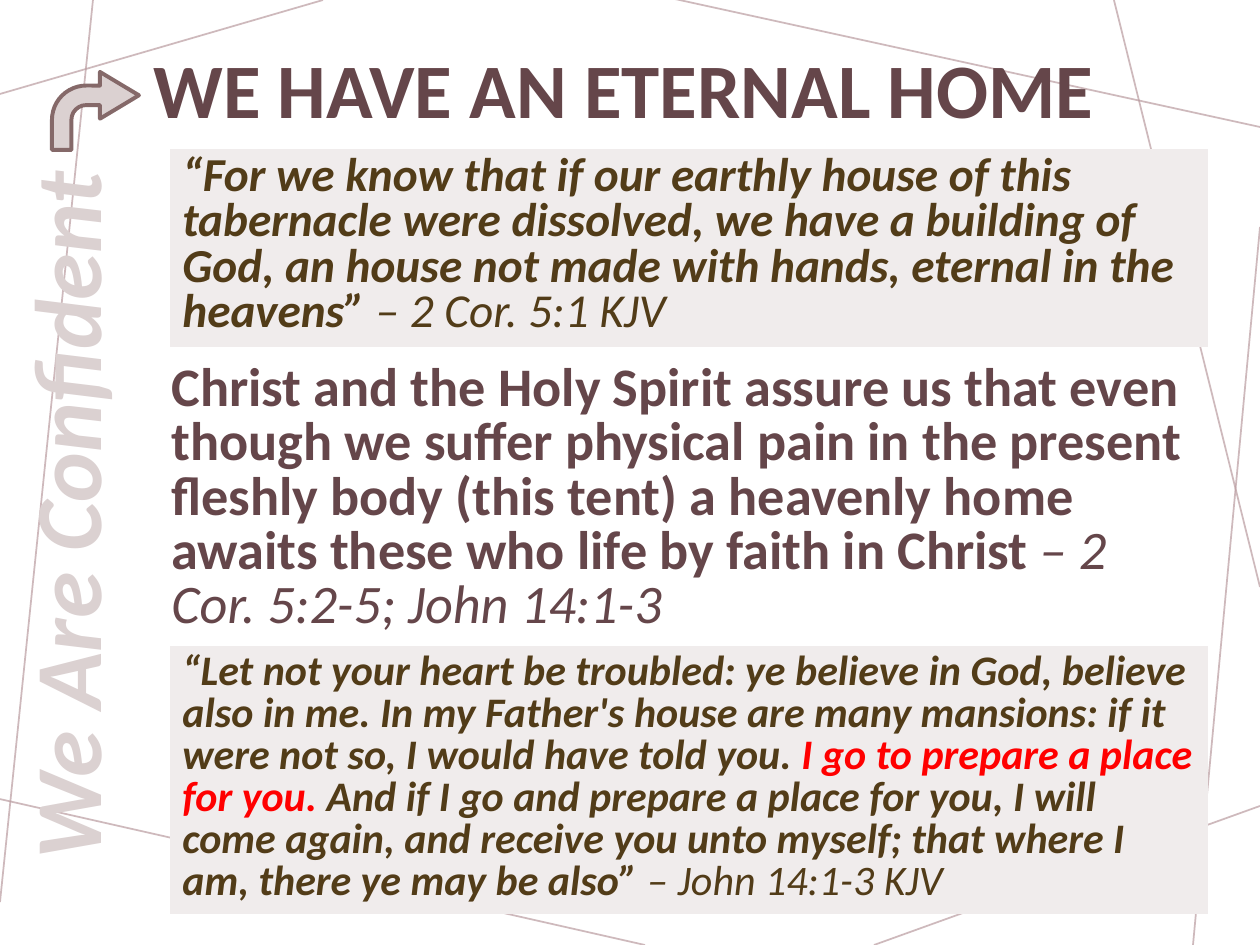
from lxml import etree
from pptx import Presentation
from pptx.dml.color import RGBColor
from pptx.enum.shapes import MSO_CONNECTOR, MSO_SHAPE
from pptx.enum.text import MSO_ANCHOR as Anchor, PP_ALIGN as Align
from pptx.oxml.ns import qn
from pptx.util import Emu, Pt

PX_PER_INCH = 126
FONT = "Calibri"
MAUVE, BROWN, RED = "65464A", "523C18", "FF0000"
PALE, PANEL, ARROW_EDGE, WEB = "DBD1D1", "F0ECEC", "856969", "BA9CA0"

# Background lines: x1, y1, x2, y2 in px
WEB_LINES = [
    (323, 0, 0, 94),
    (93, 0, 0, 902),
    (645, 945, -5, 798),
    (1260, 806, 874, 945),
    (1260, 227, 1193, 945),
    (1260, 587, 1114, 0),
    (1260, 127, 675, -1),
]

ARROW_BOX = (52, 72, 87, 78)
ARROW_ADJUSTMENTS = (0.25, 0.3, 0.5, 0.44)

# Each run: text, colour, bold, italic
TEXTS = [
    dict(box=(159, 357, 1050, 295), size=31, spacing=Pt(31), runs=[
        ("Christ and the Holy Spirit assure us that even though we suffer "
         "physical pain in the present fleshly body (this tent) a heavenly "
         "home awaits these who life by faith in Christ ", MAUVE, True, False),
        ("– 2 Cor. 5:2-5; John 14:1-3", MAUVE, False, True)]),
    dict(box=(141, 55, 1119, 78), size=44, spacing=0.9, anchor=Anchor.MIDDLE, runs=[
        ("WE HAVE AN ETERNAL HOME", MAUVE, True, False)]),
    dict(box=(-297, 452, 723, 127), size=54, rotation=270, wrap=False,
         align=Align.CENTER, runs=[("We Are Confident", PALE, True, True)]),
    dict(box=(170, 149, 1038, 198), size=27, spacing=Pt(26), fill=PANEL, runs=[
        ("“For we know that if our earthly house of this tabernacle were "
         "dissolved, we have a building of God, an house not made with hands, "
         "eternal in the heavens” ", BROWN, True, True),
        ("– 2 Cor. 5:1 KJV", BROWN, False, True)]),
    dict(box=(170, 646, 1038, 268), size=24, spacing=Pt(24), fill=PANEL, runs=[
        ("“Let not your heart be troubled: ye believe in God, believe also in "
         "me. In my Father's house are many mansions: if it were not so, I "
         "would have told you. ", BROWN, True, True),
        ("I go to prepare a place for you. ", RED, True, True),
        ("And if I go and prepare a place for you, I will come again, and "
         "receive you unto myself; that where I am, there ye may be also” ",
         BROWN, True, True),
        ("– John 14:1-3 KJV", BROWN, False, True)]),
]


def px(value):
    return Emu(round(value * 914400 / PX_PER_INCH))


def rgb(color):
    return RGBColor.from_string(color)


def add_web_line(slide, ends):
    """Draw a thin, 70 % opaque line without a shadow."""
    line = slide.shapes.add_connector(MSO_CONNECTOR.STRAIGHT, *map(px, ends))
    line.line.width = Pt(1)
    line.line.color.rgb = rgb(WEB)
    properties = line._element.spPr
    color = properties.find(".//" + qn("a:srgbClr"))
    etree.SubElement(color, qn("a:alpha"), val="70000")
    etree.SubElement(properties, qn("a:effectLst"))


def add_arrow(slide):
    arrow = slide.shapes.add_shape(MSO_SHAPE.BENT_ARROW, *map(px, ARROW_BOX))
    arrow.shadow.inherit = False
    for index, value in enumerate(ARROW_ADJUSTMENTS):
        arrow.adjustments[index] = value
    arrow.fill.solid()
    arrow.fill.fore_color.rgb = rgb(PALE)
    arrow.line.color.rgb = rgb(ARROW_EDGE)
    arrow.line.width = Pt(2.25)


def add_text(slide, box, size, runs, spacing=1.0, anchor=Anchor.TOP,
             align=Align.LEFT, rotation=0, wrap=True, fill=None):
    shape = slide.shapes.add_textbox(*map(px, box))
    shape.rotation = rotation
    if fill:
        shape.fill.solid()
        shape.fill.fore_color.rgb = rgb(fill)
    frame = shape.text_frame
    frame.word_wrap = wrap
    frame.vertical_anchor = anchor
    paragraph = frame.paragraphs[0]
    paragraph.alignment = align
    paragraph.line_spacing = spacing
    for text, color, bold, italic in runs:
        run = paragraph.add_run()
        run.text = text
        font = run.font
        font.name, font.size = FONT, Pt(size)
        font.bold, font.italic = bold, italic
        font.color.rgb = rgb(color)


def main():
    presentation = Presentation()
    presentation.slide_width, presentation.slide_height = px(1260), px(945)
    slide = presentation.slides.add_slide(presentation.slide_layouts[6])
    for ends in WEB_LINES:
        add_web_line(slide, ends)
    add_arrow(slide)
    for text in TEXTS:
        add_text(slide, **text)
    presentation.save("out.pptx")


if __name__ == "__main__":
    main()
